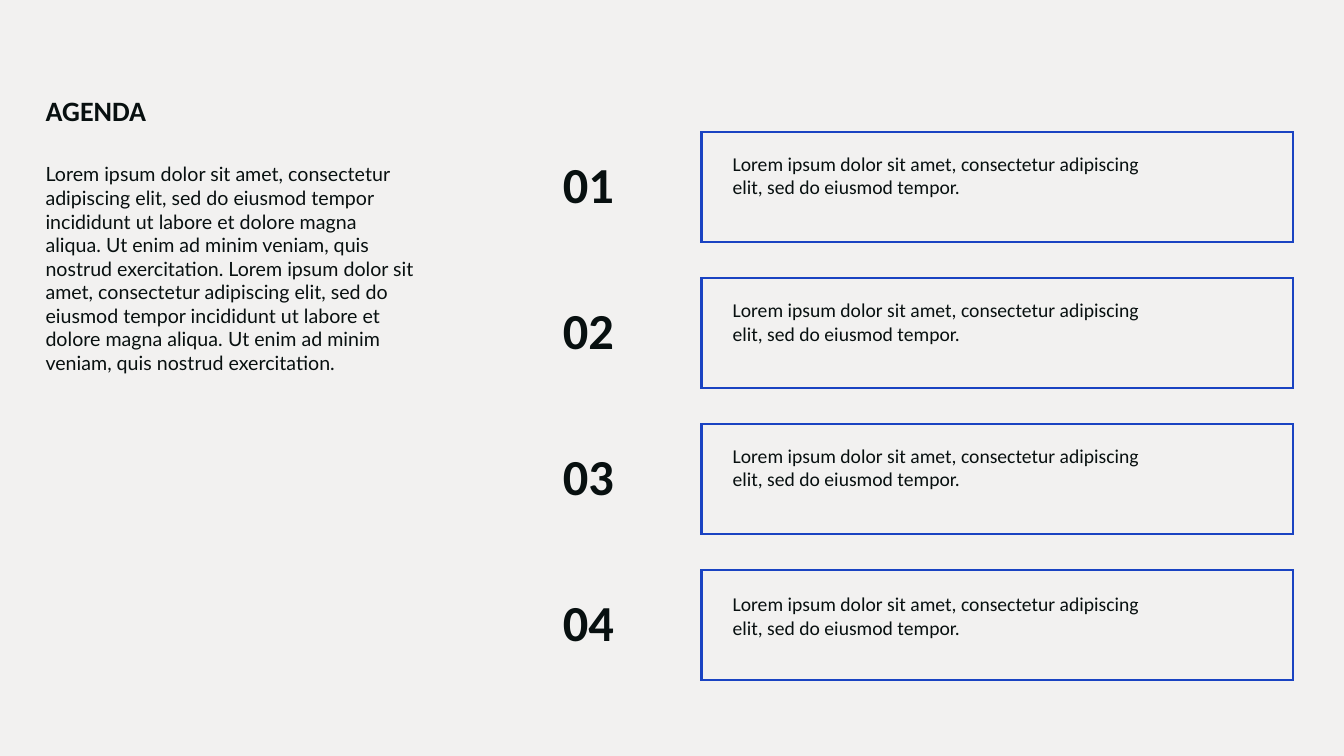
from dataclasses import dataclass

from lxml import etree
from pptx import Presentation
from pptx.dml.color import RGBColor
from pptx.enum.shapes import MSO_SHAPE
from pptx.enum.text import MSO_ANCHOR, MSO_AUTO_SIZE, PP_ALIGN
from pptx.oxml.ns import qn
from pptx.util import Pt

RECTANGLE = MSO_SHAPE.RECTANGLE
TOP = MSO_ANCHOR.TOP
NO_AUTOFIT = MSO_AUTO_SIZE.NONE
LEFT = PP_ALIGN.LEFT
TITLE_AND_CONTENT = 1
NO_BREAK_SPACE = chr(160)


@dataclass(frozen=True)
class Theme:
    background: RGBColor = RGBColor(0xF2, 0xF1, 0xF0)
    ink: RGBColor = RGBColor(0x08, 0x10, 0x10)
    accent: RGBColor = RGBColor(0x1A, 0x43, 0xC2)
    font: str = "Calibri"
    intro_font: str = "Lato"
    title_size: int = 20
    text_size: int = 14
    number_size: int = 36
    border: float = 1.5


THEME = Theme()

INTRO = (
    "Lorem ipsum dolor sit amet, consectetur adipiscing elit, sed do eiusmod "
    f"tempor incididunt ut labore et dolore magna aliqua.{NO_BREAK_SPACE}Ut enim "
    "ad minim veniam, quis nostrud exercitation. Lorem ipsum dolor sit amet, "
    "consectetur adipiscing elit, sed do eiusmod tempor incididunt ut labore et "
    f"dolore magna aliqua.{NO_BREAK_SPACE}Ut enim ad minim veniam, quis nostrud "
    "exercitation."
)
NOTE = [
    "Lorem ipsum dolor sit amet, consectetur adipiscing",
    "elit, sed do eiusmod tempor.",
]
# Number, description, distance of the description from the card top
AGENDA = [("01", NOTE, 14), ("02", NOTE, 14.3), ("03", NOTE, 14), ("04", NOTE, 15.8)]


def place(shape, left, top, width, height):
    shape.left, shape.top = Pt(left), Pt(top)
    shape.width, shape.height = Pt(width), Pt(height)


def write(shape, lines, size, font=THEME.font, bold=False, line_spacing=1.0):
    """Fill a text shape with left-aligned, unbulleted paragraphs."""
    frame = shape.text_frame
    frame.word_wrap = True
    frame.auto_size = NO_AUTOFIT
    frame.vertical_anchor = TOP
    frame.margin_left = frame.margin_top = frame.margin_right = frame.margin_bottom = 0
    frame.text = "\n".join(lines)
    for paragraph in frame.paragraphs:
        properties = paragraph._p.get_or_add_pPr()
        properties.set("marL", "0")
        properties.set("indent", "0")
        etree.SubElement(properties, qn("a:buNone"))
        paragraph.alignment = LEFT
        paragraph.line_spacing = line_spacing
        paragraph.space_before = Pt(0)
        paragraph.font.name = font
        paragraph.font.size = Pt(size)
        paragraph.font.bold = bold
        paragraph.font.color.rgb = THEME.ink


def add_introduction(slide, left, top):
    # Heading and introductory paragraph
    title = slide.shapes.title
    place(title, left, top, 877.7, 21.6)
    write(title, ["AGENDA"], THEME.title_size, bold=True, line_spacing=0.9)

    body = slide.placeholders[1]
    place(body, left, top + 46.2, 274.3, 180)
    write(body, [INTRO], THEME.text_size, font=THEME.intro_font)


def add_agenda_item(slide, number, note, note_inset, left, top, width, height):
    number_width = 99
    card_left = left + number_width
    card_width = width - number_width

    # Number and outlined card
    group = slide.shapes.add_group_shape()
    label = group.shapes.add_textbox(
        Pt(left), Pt(top + 20), Pt(number_width - 1.5), Pt(39.6))
    write(label, [number], THEME.number_size, bold=True, line_spacing=0.9)
    card = group.shapes.add_shape(
        RECTANGLE, Pt(card_left), Pt(top), Pt(card_width), Pt(height))
    card.shadow.inherit = False
    card.fill.background()
    card.line.color.rgb = THEME.accent
    card.line.width = Pt(THEME.border)
    # Square corners
    etree.SubElement(card.line._get_or_add_ln(), qn("a:miter"), lim="800000")

    # Description inside the card
    description = slide.shapes.add_textbox(
        Pt(card_left + 22.2), Pt(top + note_inset), Pt(card_width - 47.5), Pt(51.1))
    write(description, note, THEME.text_size)


def add_agenda(slide, left, top, width, height):
    card_height = 78.8
    pitch = (height - card_height) / (len(AGENDA) - 1)
    for row, (number, note, note_inset) in enumerate(AGENDA):
        add_agenda_item(slide, number, note, note_inset,
                        left, top + row * pitch, width, card_height)


def main():
    presentation = Presentation()
    presentation.slide_width, presentation.slide_height = Pt(960), Pt(540)
    slide = presentation.slides.add_slide(presentation.slide_layouts[TITLE_AND_CONTENT])
    slide.background.fill.solid()
    slide.background.fill.fore_color.rgb = THEME.background
    add_introduction(slide, left=32.5, top=69.8)
    add_agenda(slide, left=402.1, top=94.3, width=521.7, height=391.6)
    presentation.save("out.pptx")


if __name__ == "__main__":
    main()
